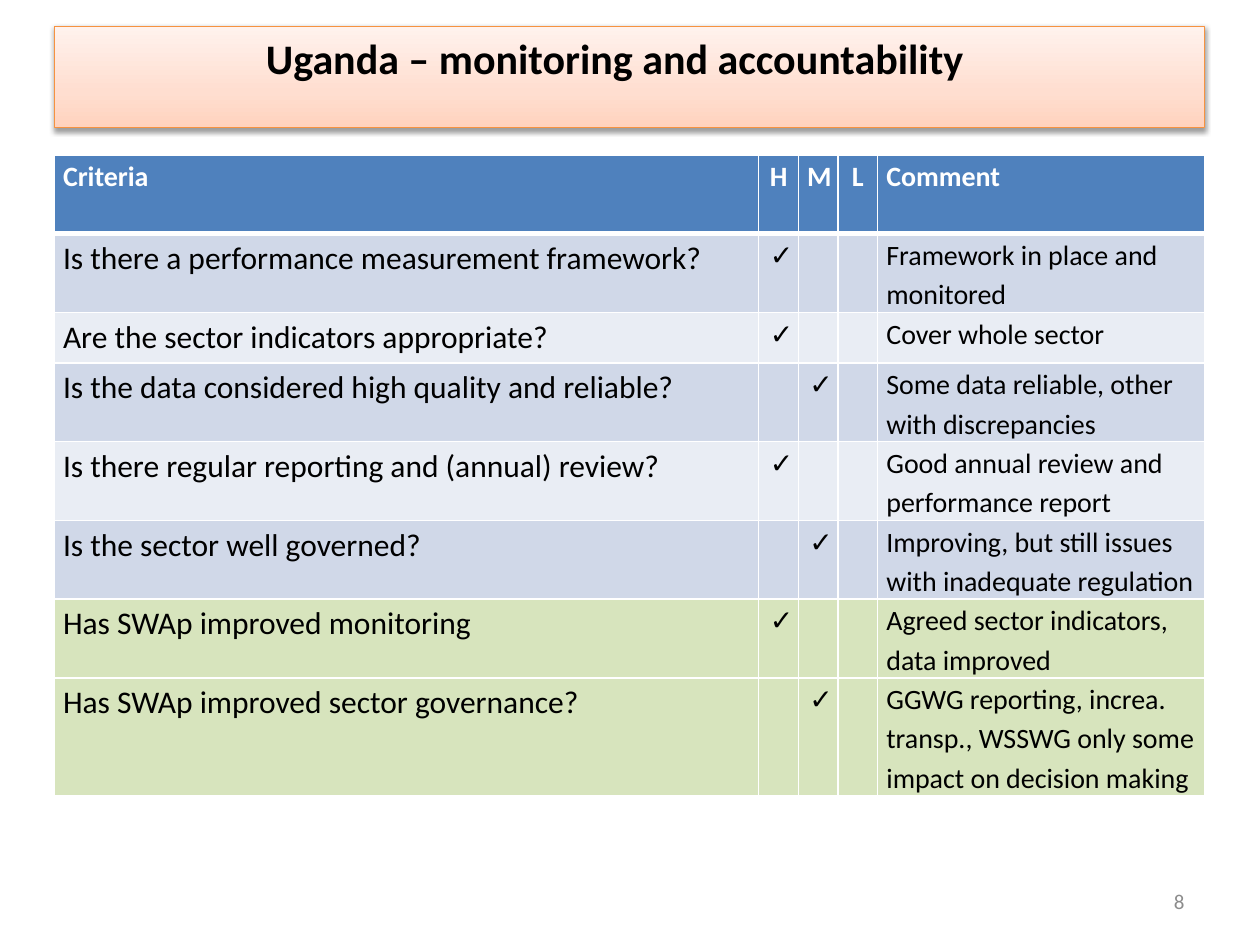
import copy

import lxml.etree
import pptx
import pptx.dml.color
import pptx.enum.shapes
import pptx.enum.text
import pptx.oxml
import pptx.oxml.ns
import pptx.util

Pt = pptx.util.Pt
ALIGN = pptx.enum.text.PP_ALIGN
ANCHOR = pptx.enum.text.MSO_ANCHOR

COLORS = {
    "header": "4F81BD", "band_dark": "D0D8E8", "band_light": "E9EDF4",
    "swap": "D7E4BD", "white": "FFFFFF", "black": "000000", "number": "8C8C8C",
    "title_line": "F69240",
}
TITLE_GRADIENT = [(0, "FFD2BD"), (0.35, "FFDED0"), (1, "FFF2ED")]

LEFT, WIDTH = 31, 657.5
COLUMN_WIDTHS = [402.5, 22.7, 22.7, 22.7, 186.9]
HEADER = ["Criteria", "H", "M", "L", "Comment"]
# Criterion, rating, comment, fill, row height
ROWS = [
    ("Is there a performance measurement framework?", "H",
     "Framework in place and monitored", "band_dark", 45),
    ("Are the sector indicators appropriate?", "H",
     "Cover whole sector", "band_light", 28.8),
    ("Is the data considered high quality and reliable?", "M",
     "Some data reliable, other with discrepancies", "band_dark", 45),
    ("Is there regular reporting and (annual) review?", "H",
     "Good annual review and performance report", "band_light", 45),
    ("Is the sector well governed?", "M",
     "Improving, but still issues with inadequate regulation", "band_dark", 45),
    ("Has SWAp improved monitoring", "H",
     "Agreed sector indicators, data improved", "swap", 45),
    ("Has SWAp improved sector governance?", "M",
     "GGWG reporting, increa. transp., WSSWG only some impact on decision making",
     "swap", 67.4),
]


def rgb(name):
    return pptx.dml.color.RGBColor.from_string(COLORS.get(name, name))


def set_values(target, values):
    for name, value in values.items():
        setattr(target, name, value)


def write_text(frame, text, size, color, bold=False, **paragraph_format):
    paragraph = frame.paragraphs[0]
    set_values(paragraph, paragraph_format)
    if text:
        paragraph.add_run().text = text
    set_values(paragraph.font, {"name": "Calibri", "size": Pt(size), "bold": bold})
    paragraph.font.color.rgb = rgb(color)
    for run in paragraph.runs:
        set_values(run.font, {"name": "Calibri", "size": Pt(size), "bold": bold})
        run.font.color.rgb = rgb(color)
    return paragraph


def add_shadow(shape):
    shape.shadow.inherit = False
    effects = shape._element.spPr.find(pptx.oxml.ns.qn("a:effectLst"))
    effects.append(pptx.oxml.parse_xml(
        f'<a:outerShdw {pptx.oxml.ns.nsdecls("a")} blurRad="{Pt(3.1)}" '
        f'dist="{Pt(1.6)}" dir="5400000" rotWithShape="0">'
        f'<a:srgbClr val="{COLORS["black"]}"><a:alpha val="38000"/></a:srgbClr>'
        '</a:outerShdw>'))


def add_title(slide, text):
    shape = slide.shapes.add_shape(
        pptx.enum.shapes.MSO_SHAPE.RECTANGLE, Pt(LEFT), Pt(15), Pt(WIDTH), Pt(58))
    shape.fill.gradient()
    stop_list = shape._element.spPr.find(".//" + pptx.oxml.ns.qn("a:gsLst"))
    stop_list.append(copy.deepcopy(stop_list[0]))
    for stop, (position, color) in zip(shape.fill.gradient_stops, TITLE_GRADIENT):
        stop.position = position
        stop.color.rgb = rgb(color)
    shape.fill.gradient_angle = 90
    shape.line.color.rgb = rgb("title_line")
    shape.line.width = Pt(0.75)
    add_shadow(shape)
    set_values(shape.text_frame, {
        "word_wrap": True, "vertical_anchor": ANCHOR.TOP, "margin_right": Pt(24)})
    write_text(shape.text_frame, text, 24, "black", True, alignment=ALIGN.CENTER)


def set_borders(cell, bottom_width):
    widths = {"lnL": 1, "lnR": 1, "lnT": 1, "lnB": bottom_width}
    properties = cell._tc.get_or_add_tcPr()
    for tag, width in widths.items():
        line = lxml.etree.SubElement(
            properties, pptx.oxml.ns.qn("a:" + tag), w=str(Pt(width)))
        fill = lxml.etree.SubElement(line, pptx.oxml.ns.qn("a:solidFill"))
        lxml.etree.SubElement(
            fill, pptx.oxml.ns.qn("a:srgbClr"), val=COLORS["white"])


def set_indent(paragraph, left, first_line):
    properties = paragraph._p.get_or_add_pPr()
    properties.set("marL", str(Pt(left)))
    properties.set("indent", str(Pt(first_line)))


def fill_cell(cell, text, column, fill, header=False):
    set_values(cell, {"margin_left": Pt(5), "margin_right": Pt(5),
                      "margin_top": 0, "margin_bottom": 0})
    set_borders(cell, 3 if header else 1)
    cell.fill.solid()
    cell.fill.fore_color.rgb = rgb(fill)
    size = 18 if column == 0 and not header else 16
    centered = header and column in (2, 3)
    paragraph = write_text(
        cell.text_frame, text, size, "white" if header else "black", header,
        line_spacing=1.15, alignment=ALIGN.CENTER if centered else ALIGN.LEFT)
    if column == 0:
        set_indent(paragraph, 27, -27)
    elif column < 4 and not centered:
        set_indent(paragraph, 1.4, 0)


def add_criteria_table(slide):
    heights = [45] + [row[-1] for row in ROWS]
    table = slide.shapes.add_table(
        len(heights), len(HEADER), Pt(LEFT), Pt(88.6), Pt(WIDTH),
        Pt(sum(heights))).table
    for column, width in zip(table.columns, COLUMN_WIDTHS):
        column.width = Pt(width)
    for row, height in zip(table.rows, heights):
        row.height = Pt(height)
    for column, text in enumerate(HEADER):
        fill_cell(table.cell(0, column), text, column, "header", header=True)
    for index, (criterion, rating, comment, fill, _) in enumerate(ROWS, 1):
        marks = ["✓" if level == rating else "" for level in HEADER[1:4]]
        for column, text in enumerate([criterion, *marks, comment]):
            fill_cell(table.cell(index, column), text, column, fill)


def add_slide_number(slide, text):
    box = slide.shapes.add_textbox(Pt(516), Pt(500.5), Pt(168), Pt(28.8))
    set_values(box.text_frame, {"word_wrap": True, "vertical_anchor": ANCHOR.MIDDLE})
    write_text(box.text_frame, text, 12, "number", alignment=ALIGN.RIGHT)


def main():
    presentation = pptx.Presentation()
    set_values(presentation, {"slide_width": Pt(720), "slide_height": Pt(540)})
    slide = presentation.slides.add_slide(presentation.slide_layouts[6])
    add_criteria_table(slide)
    add_title(slide, "Uganda – monitoring and accountability")
    add_slide_number(slide, "8")
    presentation.save("out.pptx")


if __name__ == "__main__":
    main()
